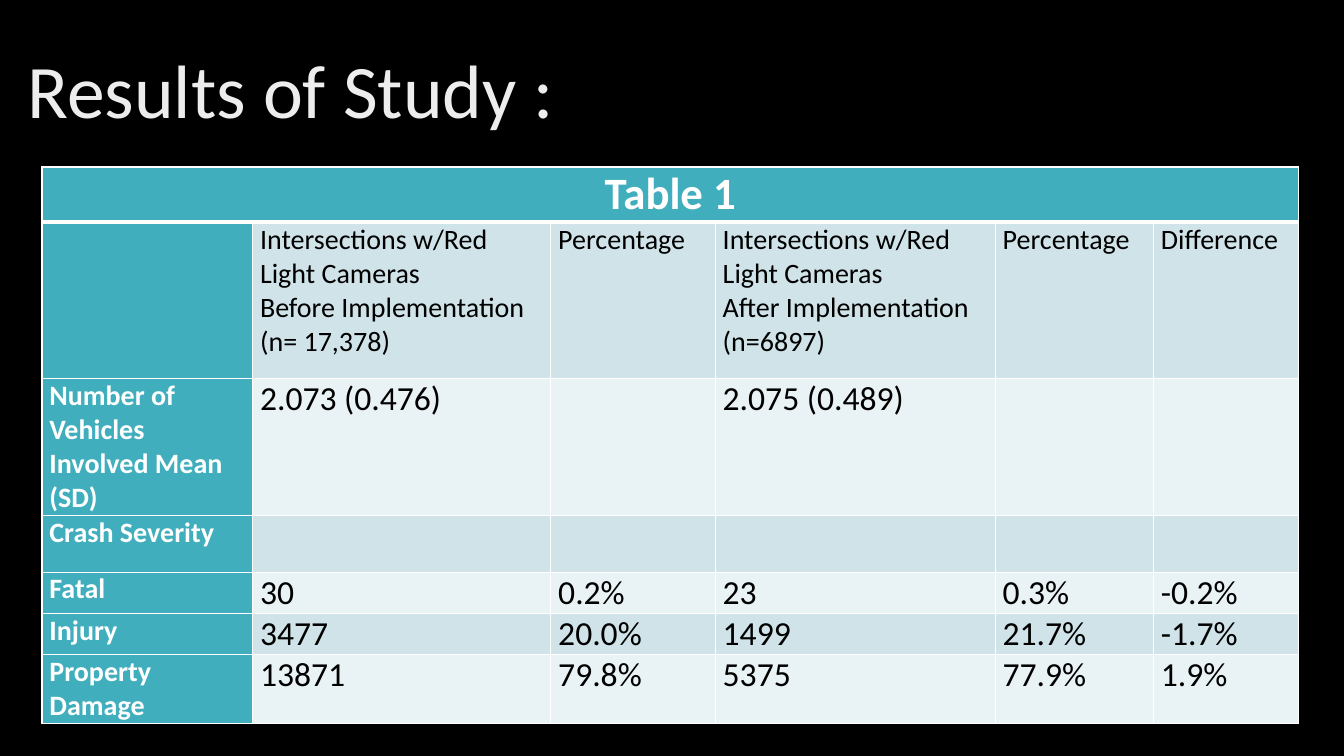
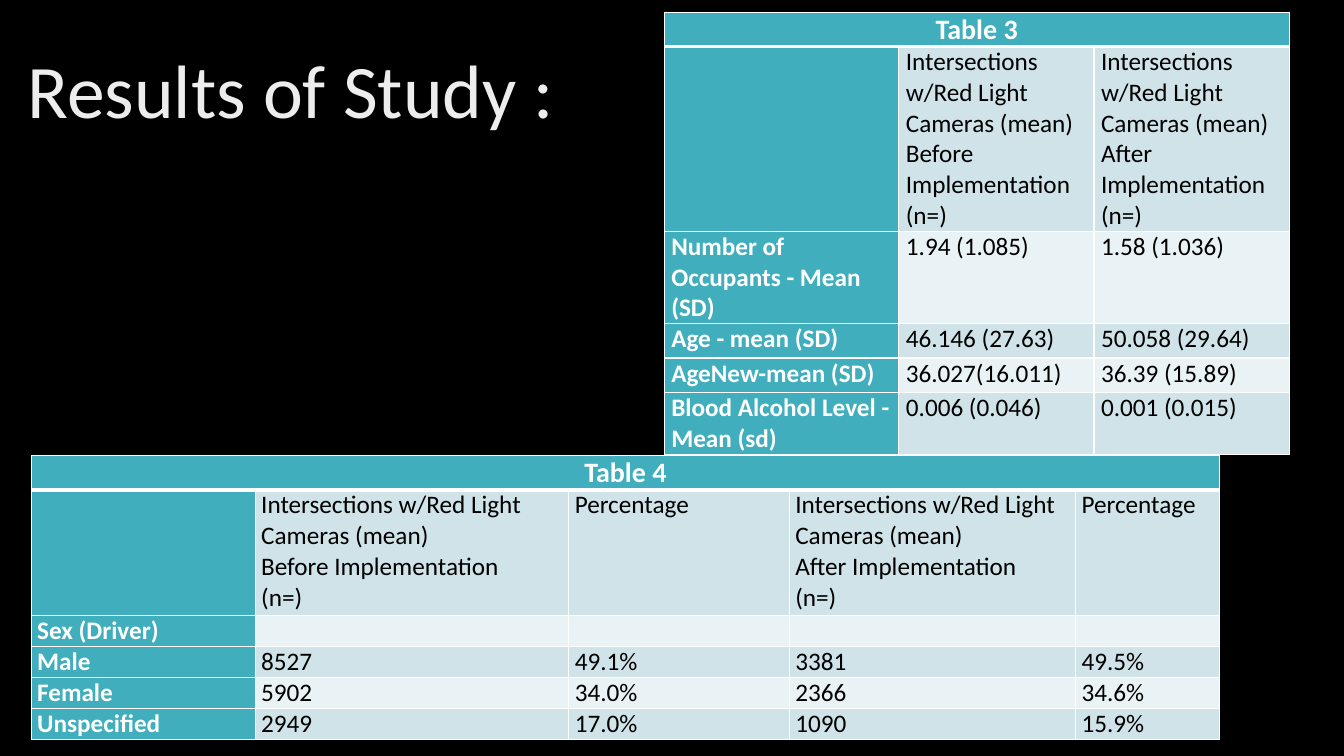
from lxml.etree import SubElement
from pptx import Presentation
from pptx.dml.color import RGBColor
from pptx.enum.text import MSO_ANCHOR, PP_ALIGN
from pptx.oxml.ns import qn
from pptx.util import Pt

FONT = "Calibri"
BLACK = RGBColor(0x00, 0x00, 0x00)
WHITE = RGBColor(0xFF, 0xFF, 0xFF)
TITLE_GREY = RGBColor(0xED, 0xED, 0xED)
TEAL = RGBColor(0x41, 0xAE, 0xBD)
BANDS = (RGBColor(0xCF, 0xE3, 0xE8), RGBColor(0xE9, 0xF2, 0xF4))

CRASHES = [
    ["Table 1"],
    ["",
     "Intersections w/Red Light Cameras \nBefore Implementation\n(n= 17,378)",
     "Percentage",
     "Intersections w/Red Light Cameras \nAfter Implementation\n(n=6897)",
     "Percentage", "Difference"],
    ["Number of Vehicles Involved Mean (SD)",
     "2.073 (0.476)", "", "2.075 (0.489)", "", ""],
    ["Crash Severity", "", "", "", "", ""],
    ["Fatal", "30", "0.2%", "23", "0.3%", "-0.2%"],
    ["Injury", "3477", "20.0%", "1499", "21.7%", "-1.7%"],
    ["Property Damage", "13871", "79.8%", "5375", "77.9%", "1.9%"],
]

MEAN_BEFORE = "Intersections w/Red Light Cameras (mean)\nBefore Implementation\n(n=)"
MEAN_AFTER = MEAN_BEFORE.replace("Before", "After")

OCCUPANTS = [
    ["Table 3"],
    ["", MEAN_BEFORE, MEAN_AFTER],
    ["Number of Occupants - Mean (SD)", "1.94 (1.085)", "1.58 (1.036)"],
    ["Age - mean (SD)", "46.146 (27.63)", "50.058 (29.64)"],
    ["AgeNew-mean (SD)", "36.027(16.011)", "36.39 (15.89)"],
    ["Blood Alcohol Level - Mean (sd)", "0.006 (0.046)", "0.001 (0.015)"],
]

DRIVER_SEX = [
    ["Table 4"],
    ["", MEAN_BEFORE, "Percentage", MEAN_AFTER, "Percentage"],
    ["Sex (Driver)", "", "", "", ""],
    ["Male", "8527", "49.1%", "3381", "49.5%"],
    ["Female", "5902", "34.0%", "2366", "34.6%"],
    ["Unspecified", "2949", "17.0%", "1090", "15.9%"],
]


def add_run(paragraph, text, size, color, bold=False):
    run = paragraph.add_run()
    run.text = text
    run.font.name = FONT
    run.font.size = Pt(size)
    run.font.bold = bold
    run.font.color.rgb = color


def add_study_slide(prs):
    """Black slide with the shared title."""
    slide = prs.slides.add_slide(prs.slide_layouts[6])
    slide.background.fill.solid()
    slide.background.fill.fore_color.rgb = BLACK
    title = slide.shapes.add_textbox(Pt(12.5), Pt(15), Pt(828), Pt(104.5))
    title.text_frame.word_wrap = True
    title.text_frame.vertical_anchor = MSO_ANCHOR.MIDDLE
    paragraph = title.text_frame.paragraphs[0]
    paragraph.line_spacing = 0.9
    add_run(paragraph, "Results of Study :", 54, TITLE_GREY)
    return slide


def set_borders(cell, top, bottom):
    """White lines around a cell; top and bottom widths in points."""
    properties = cell._tc.get_or_add_tcPr()
    for side, width in (("L", 1), ("R", 1), ("T", top), ("B", bottom)):
        line = SubElement(properties, qn(f"a:ln{side}"), w=str(Pt(width)))
        fill = SubElement(line, qn("a:solidFill"))
        SubElement(fill, qn("a:srgbClr"), val=str(WHITE))


def write_cell(cell, text, size, color, bold):
    paragraph = cell.text_frame.paragraphs[0]
    for index, line in enumerate(text.split("\n") if text else []):
        if index:
            paragraph.add_line_break()
        add_run(paragraph, line, size, color, bold)


def add_results_table(slide, left, top, widths, heights, rows,
                      caption_size, label_size, value_size, inset):
    """Caption row, label column and banded values."""
    table = slide.shapes.add_table(
        len(heights), len(widths), Pt(left), Pt(top),
        Pt(sum(widths)), Pt(sum(heights))).table
    table.first_row = table.horz_banding = False
    for column, width in zip(table.columns, widths):
        column.width = Pt(width)
    for row, height in zip(table.rows, heights):
        row.height = Pt(height)

    for r, texts in enumerate(rows):
        for c in range(len(widths)):
            cell = table.cell(r, c)
            cell.margin_left = cell.margin_right = Pt(inset)
            cell.margin_top = cell.margin_bottom = 0
            set_borders(cell, 3 if r == 1 else 1, 3 if r == 0 else 1)
            is_label = r == 0 or c == 0
            cell.fill.solid()
            cell.fill.fore_color.rgb = TEAL if is_label else BANDS[(r - 1) % 2]
            if c < len(texts):
                size = (caption_size if r == 0 else
                        label_size if r == 1 or c == 0 else value_size)
                write_cell(cell, texts[c], size,
                           WHITE if is_label else BLACK, is_label)

    # Caption across all columns
    table.cell(0, 0).merge(table.cell(0, len(widths) - 1))
    table.cell(0, 0).text_frame.paragraphs[0].alignment = PP_ALIGN.CENTER


def main():
    prs = Presentation()
    prs.slide_width, prs.slide_height = Pt(960), Pt(540)

    # Crashes
    crash_slide = add_study_slide(prs)
    add_results_table(
        crash_slide, 30, 119.3, [150.5, 213, 117.5, 200, 113, 103.7],
        [39.5, 111.5, 98, 40.5, 29.5, 29.5, 48.8], CRASHES,
        caption_size=32, label_size=20, value_size=24, inset=5.3)

    # Occupants and drivers
    people_slide = add_study_slide(prs)
    add_results_table(
        people_slide, 474.5, 8.8, [167.6, 139.4, 139.4],
        [24.5, 132, 66, 24.5, 24.5, 44.5], OCCUPANTS,
        caption_size=20, label_size=18, value_size=18, inset=5)
    add_results_table(
        people_slide, 22.3, 325.4, [160, 224, 157.5, 204.5, 103],
        [24.5, 89.5] + [22.3] * 4, DRIVER_SEX,
        caption_size=20, label_size=18, value_size=18, inset=4.3)

    prs.save("out.pptx")


if __name__ == "__main__":
    main()
